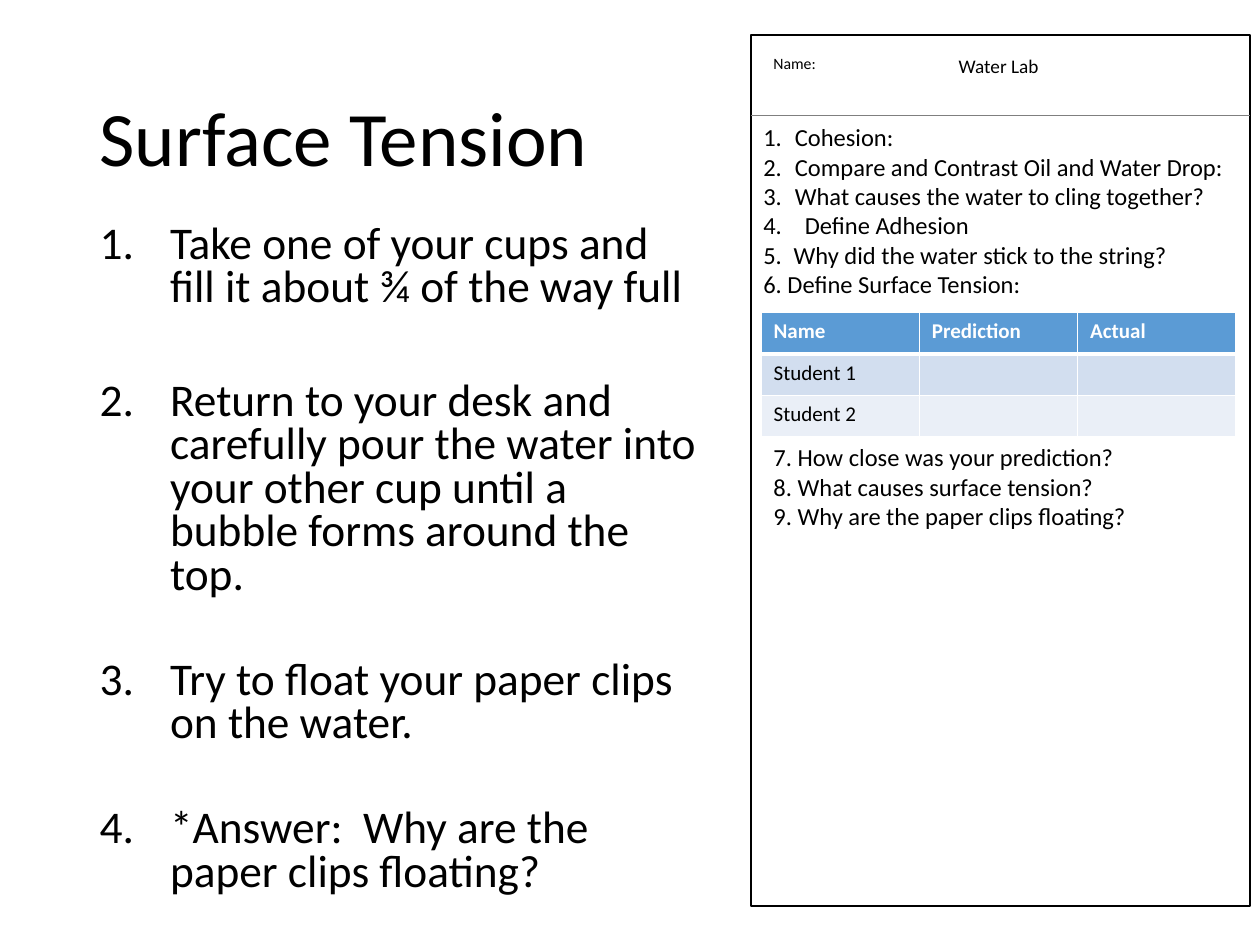
from lxml import etree
from pptx import Presentation
from pptx import util as u
from pptx.dml import color
from pptx.enum import shapes, text
from pptx.oxml import ns

COLORS = {
    "ink": "000000", "paper": "FFFFFF", "rule": "7F7F7F",
    "header": "5B9BD5", "band1": "D2DEEF", "band2": "EAEFF7",
}
FONT = "Calibri"
STEPS = [
    ("Take one of your cups and fill it about ¾ of the way full", 10),
    ("Return to your desk and carefully pour the water into your other cup "
     "until a bubble forms around the top.", 40),
    ("Try to float your paper clips on the water.", 35),
    ("*Answer:  Why are the paper clips floating?", 35),
]
NUMBERED = ["Cohesion:", "Compare and Contrast Oil and Water Drop:",
            "What causes the water to cling together?"]
TYPED = [("4.\tDefine Adhesion", 0.33),
         ("5.\tWhy did the water stick to the string?", 0.24),
         ("6. Define Surface Tension:", 0)]
CLOSING = ["7. How close was your prediction?", "8. What causes surface tension?",
           "9. Why are the paper clips floating?"]
ROWS = [("header", ["Name", "Prediction", "Actual"]),
        ("band1", ["Student 1", "", ""]),
        ("band2", ["Student 2", "", ""])]


def rgb(name):
    """Return the named colour."""
    return color.RGBColor.from_string(COLORS[name])


def place(sp, left, top, width, height):
    """Move and size a shape in inches."""
    sp.left, sp.top = u.Inches(left), u.Inches(top)
    sp.width, sp.height = u.Inches(width), u.Inches(height)


def add_run(p, words, size, ink="ink", bold=False):
    """Add one formatted run to a paragraph."""
    r = p.add_run()
    r.text = words
    r.font.name, r.font.size, r.font.bold = FONT, u.Pt(size), bold
    r.font.color.rgb = rgb(ink)


def next_paragraph(tf):
    """Return the empty first paragraph or a new one."""
    first = tf.paragraphs[0]
    return tf.add_paragraph() if first.runs else first


def hang(p, indent, numbered=False):
    """Give a paragraph a hanging indent and optional automatic number."""
    pPr = p._p.get_or_add_pPr()
    pPr.set("marL", str(u.Inches(indent)))
    pPr.set("indent", str(-u.Inches(indent)))
    if numbered:
        etree.SubElement(pPr, ns.qn("a:buFont"), typeface="+mj-lt")
        etree.SubElement(pPr, ns.qn("a:buAutoNum"), type="arabicPeriod")


def add_text(s, box, lines, size):
    """Add a wrapped text box with one paragraph per line."""
    tf = s.shapes.add_textbox(*map(u.Inches, box)).text_frame
    tf.word_wrap = True
    for line in lines:
        add_run(next_paragraph(tf), line, size)
    return tf


def add_title(s):
    """Fill the title placeholder."""
    sp = s.shapes.title
    place(sp, 0.69, 0.4, 8.62, 1.45)
    tf = sp.text_frame
    tf.auto_size = text.MSO_AUTO_SIZE.NONE
    tf.vertical_anchor = text.MSO_ANCHOR.MIDDLE
    p = tf.paragraphs[0]
    p.alignment, p.line_spacing = text.PP_ALIGN.LEFT, 0.9
    add_run(p, "Surface Tension", 44)


def add_steps(s):
    """Fill the body placeholder with the numbered steps."""
    sp = s.placeholders[1]
    place(sp, 0.69, 1.73, 4.94, 5.46)
    tf = sp.text_frame
    tf.auto_size = text.MSO_AUTO_SIZE.NONE
    for words, gap in STEPS:
        p = next_paragraph(tf)
        p.line_spacing, p.space_before = 0.8, u.Pt(gap)
        hang(p, 0.56, numbered=True)
        add_run(p, words, 25.9)


def add_sheet(s):
    """Draw the worksheet page and the rule under its heading."""
    box = map(u.Inches, (5.96, 0.28, 3.96, 6.91))
    sp = s.shapes.add_shape(shapes.MSO_SHAPE.RECTANGLE, *box)
    sp.shadow.inherit = False
    sp.fill.solid()
    sp.fill.fore_color.rgb = rgb("paper")
    sp.line.color.rgb, sp.line.width = rgb("ink"), u.Pt(1)
    ends = map(u.Inches, (5.96, 0.92, 9.92, 0.92))
    rule = s.shapes.add_connector(shapes.MSO_CONNECTOR.STRAIGHT, *ends)
    rule.line.color.rgb, rule.line.width = rgb("rule"), u.Pt(0.5)
    etree.SubElement(rule._element.spPr, ns.qn("a:effectLst"))


def add_borders(cell, bottom):
    """Give a cell white borders with the given bottom width."""
    tcPr = cell._tc.get_or_add_tcPr()
    for side, width in (("L", 1), ("R", 1), ("T", 1), ("B", bottom)):
        ln = etree.SubElement(tcPr, ns.qn(f"a:ln{side}"), w=str(u.Pt(width)))
        fill = etree.SubElement(ln, ns.qn("a:solidFill"))
        etree.SubElement(fill, ns.qn("a:srgbClr"), val=COLORS["paper"])


def add_predictions(s):
    """Add the table of predictions and results."""
    box = map(u.Inches, (6.04, 2.48, 3.77, 0.99))
    table = s.shapes.add_table(len(ROWS), 3, *box).table
    for i, (fill, words) in enumerate(ROWS):
        head = fill == "header"
        for j, word in enumerate(words):
            cell = table.cell(i, j)
            add_borders(cell, 3 if i == 0 else 1)
            cell.fill.solid()
            cell.fill.fore_color.rgb = rgb(fill)
            p = cell.text_frame.paragraphs[0]
            if word:
                add_run(p, word, 12, "paper" if head else "ink", head)
            else:
                etree.SubElement(p._p, ns.qn("a:endParaRPr"), sz="1200")


def add_questions(s):
    """Add the worksheet questions above and below the table."""
    add_text(s, (6.04, 3.46, 3.69, 0.99), CLOSING, 14)
    tf = add_text(s, (5.96, 0.92, 3.96, 1.88), NUMBERED, 14)
    for p in tf.paragraphs:
        hang(p, 0.25, numbered=True)
    for words, indent in TYPED:
        p = next_paragraph(tf)
        hang(p, indent)
        add_run(p, words, 14)


def main():
    """Build and save the slide."""
    prs = Presentation()
    prs.slide_width, prs.slide_height = u.Inches(10), u.Inches(7.5)
    s = prs.slides.add_slide(prs.slide_layouts[1])
    add_title(s)
    add_steps(s)
    add_sheet(s)
    add_text(s, (6.04, 0.38, 0.86, 0.25), ["Name:"], 9)
    add_text(s, (7.51, 0.38, 0.86, 0.29), ["Water Lab"], 11)
    add_predictions(s)
    add_questions(s)
    prs.save("out.pptx")


if __name__ == "__main__":
    main()
